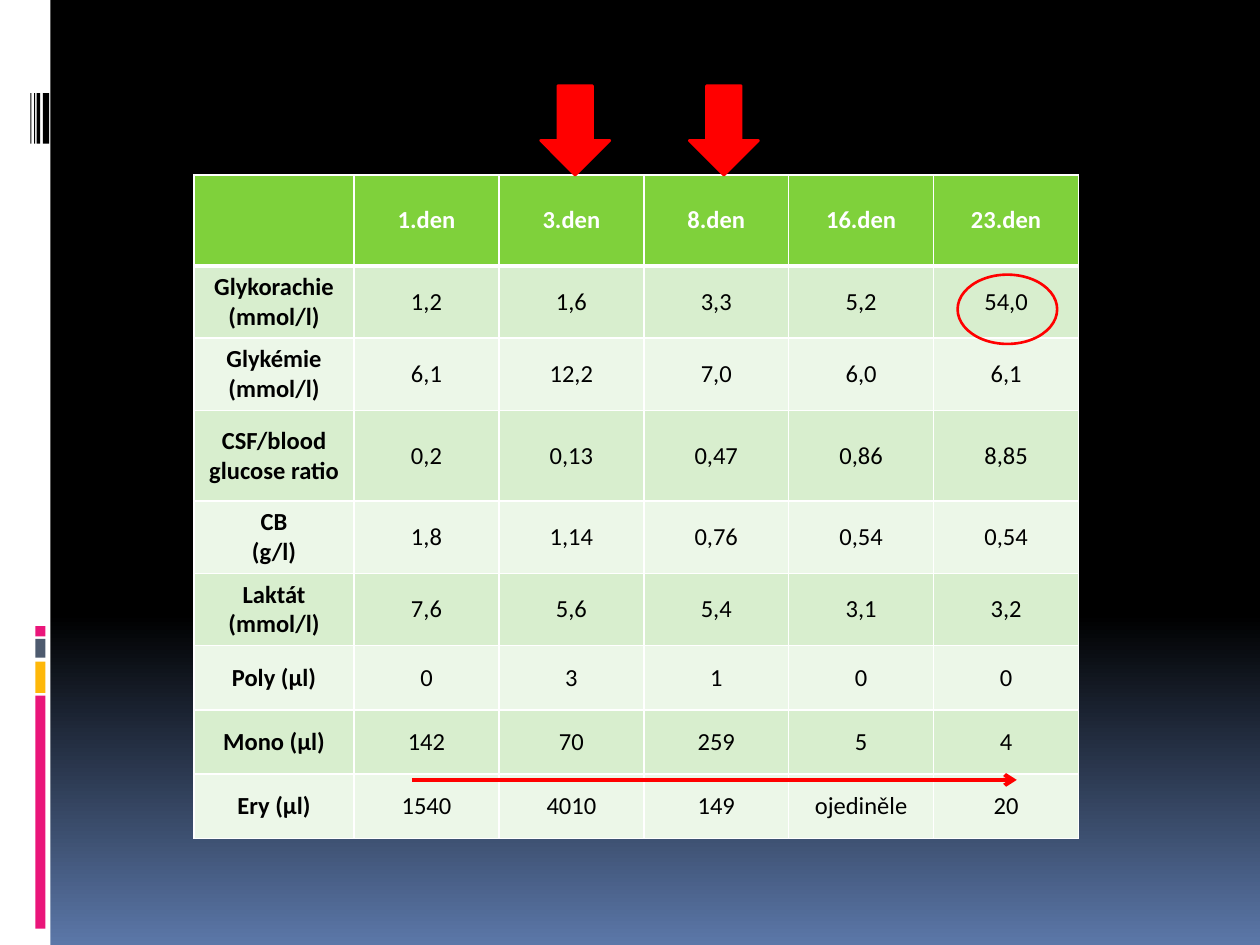
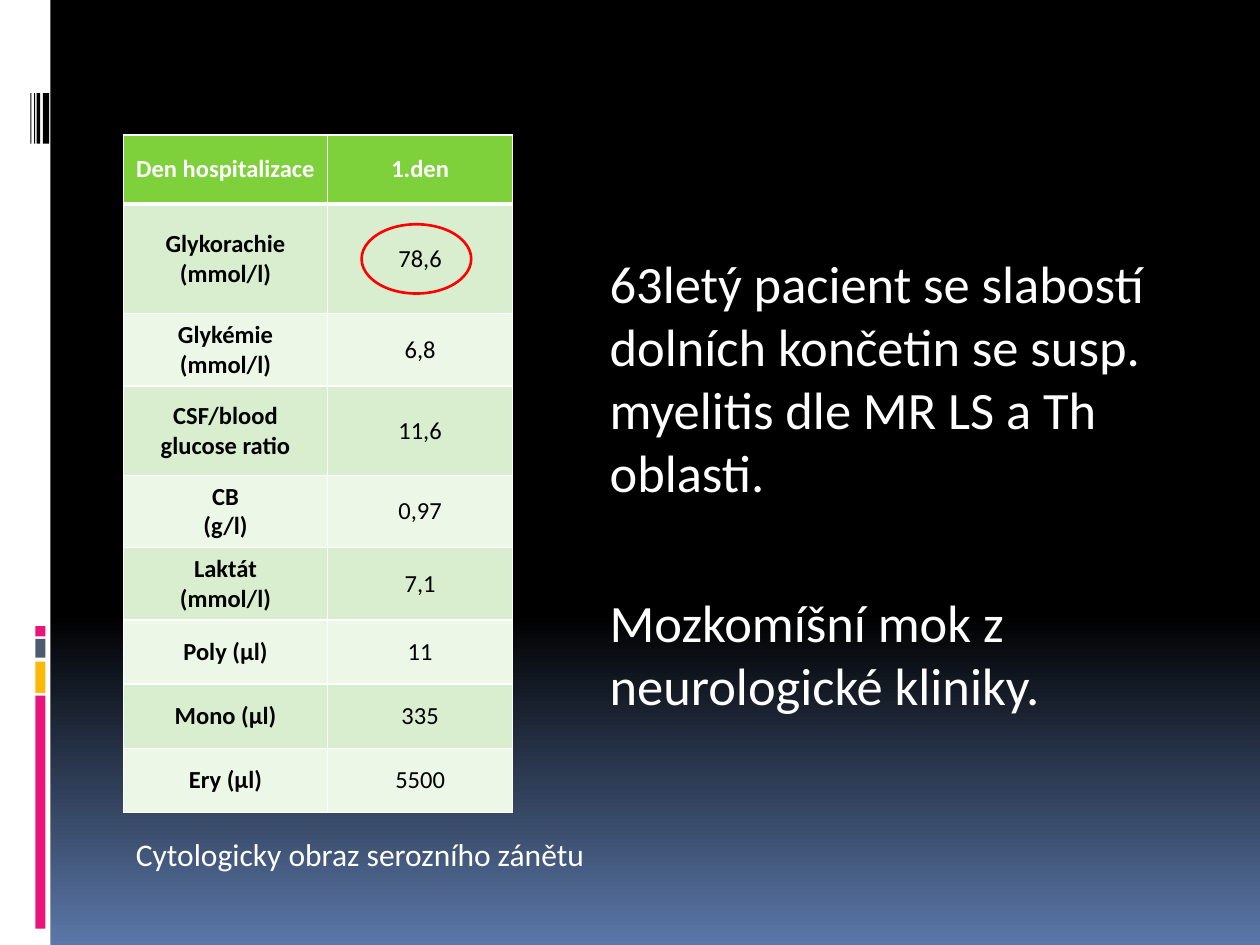
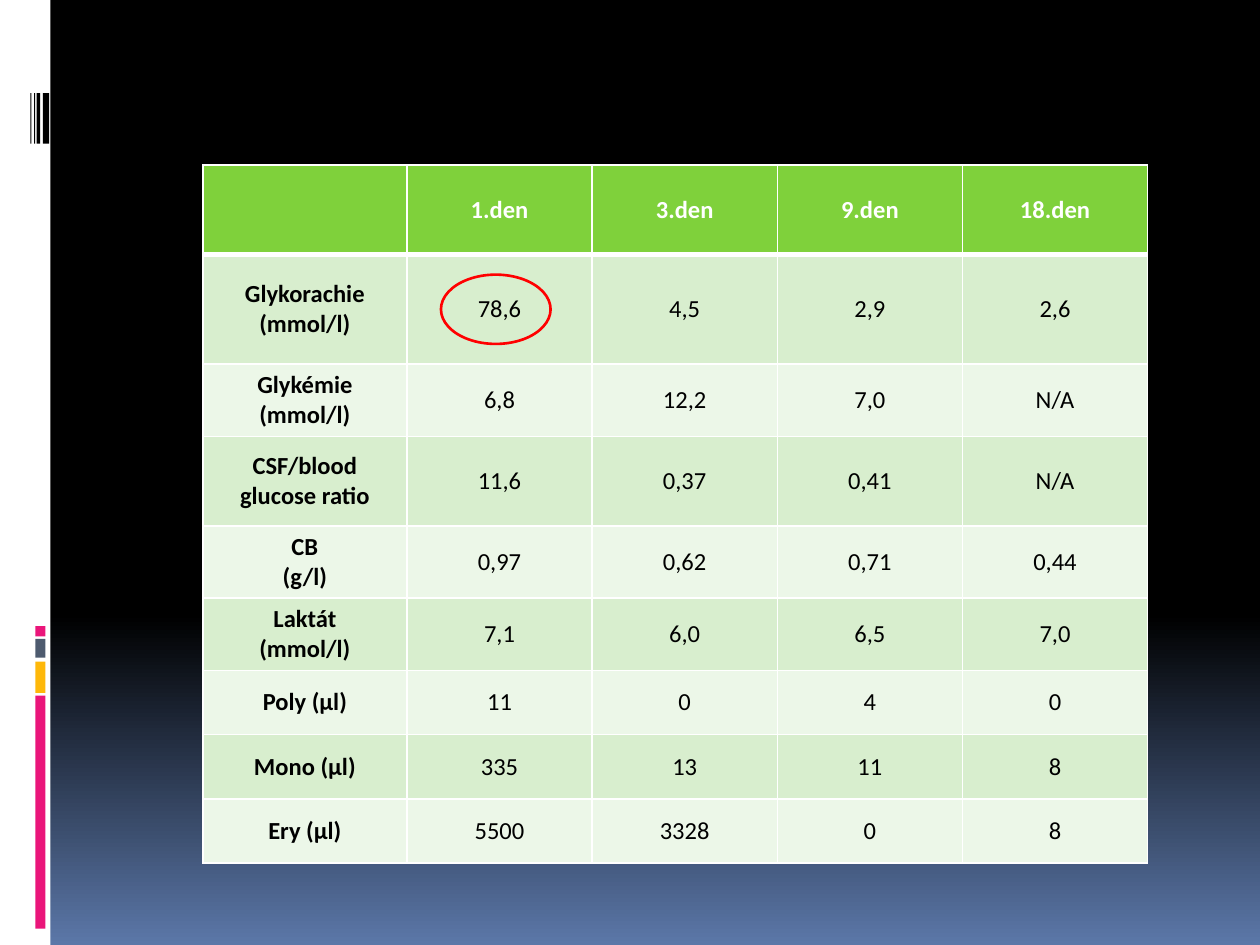
from pptx import Presentation
from pptx.dml.color import RGBColor as RGB
from pptx.enum.shapes import MSO_CONNECTOR as Line, MSO_SHAPE as Form
from pptx.enum.text import MSO_ANCHOR as Anchor, MSO_AUTO_SIZE as Fit, PP_ALIGN as Align
from pptx.oxml import parse_xml
from pptx.oxml.ns import nsdecls
from pptx.util import Inches, Pt

BLACK = RGB(0x00, 0x00, 0x00)
WHITE = RGB(0xFF, 0xFF, 0xFF)
BLUE = RGB(0x5B, 0x77, 0xA8)
PINK = RGB(0xEA, 0x15, 0x7A)
AMBER = RGB(0xFE, 0xB8, 0x0A)
SLATE = RGB(0x4E, 0x5B, 0x6F)
GREEN = RGB(0x7F, 0xD1, 0x3B)
PALE = RGB(0xEC, 0xF7, 0xE8)
MINT = RGB(0xD8, 0xEE, 0xCE)
RED = RGB(0xFF, 0x00, 0x00)
FONT = "Calibri"

BLOCKS = [(4.97, 0.08, PINK), (5.07, 0.15, SLATE), (5.25, 0.25, AMBER), (5.52, 1.85, PINK)]
BARS = [(0.24, 0.01), (0.27, 0.01), (0.29, 0.03), (0.34, 0.05)]
LABELS = [
    "Glykorachie\n(mmol/l)", "Glykémie\n(mmol/l)", "CSF/blood glucose ratio",
    "CB\n(g/l)", "Laktát\n(mmol/l)", "Poly (µl)", "Mono (µl)", "Ery (µl)",
]
COURSE = [
    ["", "1.den", "3.den", "8.den", "16.den", "23.den"],
    ["1,2", "1,6", "3,3", "5,2", "54,0"],
    ["6,1", "12,2", "7,0", "6,0", "6,1"],
    ["0,2", "0,13", "0,47", "0,86", "8,85"],
    ["1,8", "1,14", "0,76", "0,54", "0,54"],
    ["7,6", "5,6", "5,4", "3,1", "3,2"],
    ["0", "3", "1", "0", "0"],
    ["142", "70", "259", "5", "4"],
    ["1540", "4010", "149", "ojediněle", "20"],
]
FOLLOW = [
    ["", "1.den", "3.den", "9.den", "18.den"],
    ["78,6", "4,5", "2,9", "2,6"],
    ["6,8", "12,2", "7,0", "N/A"],
    ["11,6", "0,37", "0,41", "N/A"],
    ["0,97", "0,62", "0,71", "0,44"],
    ["7,1", "6,0", "6,5", "7,0"],
    ["11", "0", "4", "0"],
    ["335", "13", "11", "8"],
    ["5500", "3328", "0", "8"],
]
ENTRY = [["Den hospitalizace", "1.den"]] + [row[:1] for row in FOLLOW[1:]]


class Deck:
    """Holds the deck style and the slide being drawn."""

    def __init__(self):
        self.prs = Presentation()
        self.prs.slide_width, self.prs.slide_height = Inches(10), Inches(7.5)

    def start(self):
        self.slide = self.prs.slides.add_slide(self.prs.slide_layouts[6])
        self.shapes = self.slide.shapes
        fill = self.slide.background.fill
        fill.gradient()
        fill.gradient_angle = 270
        for stop, place, color in zip(fill.gradient_stops, (0.65, 1), (BLACK, BLUE)):
            stop.position = place
            stop.color.rgb = color
        self.shape(Form.RECTANGLE, 0, 0, 0.4, 7.5, WHITE)
        for top, high, color in BLOCKS:
            self.shape(Form.RECTANGLE, 0.28, top, 0.08, high, color)
        for left, wide in BARS:
            self.shape(Form.RECTANGLE, left, 0.74, wide, 0.4, BLACK)

    def shape(self, form, left, top, wide, high, fill=None, line=None):
        item = self.shapes.add_shape(form, Inches(left), Inches(top), Inches(wide), Inches(high))
        item.shadow.inherit = False
        if fill is None:
            item.fill.background()
        else:
            item.fill.solid()
            item.fill.fore_color.rgb = fill
        if line is None:
            item.line.fill.background()
        else:
            item.line.color.rgb = line
            item.line.width = Pt(1.5)

    def ring(self, left, top, wide):
        self.shape(Form.OVAL, left, top, wide, 0.55, line=RED)

    def arrow(self, left, right, y):
        line = self.shapes.add_connector(
            Line.STRAIGHT, Inches(left), Inches(y), Inches(right), Inches(y))
        line.line.color.rgb = RED
        line.line.width = Pt(2.25)
        line.line._get_or_add_ln().append(parse_xml(f'<a:tailEnd {nsdecls("a")} type="arrow"/>'))
        line._element.spPr.append(parse_xml(f'<a:effectLst {nsdecls("a")}/>'))

    def style(self, para, size, color=WHITE, bold=False):
        font = para.font
        font.name, font.size, font.bold = FONT, Pt(size), bold
        font.color.rgb = color

    def text(self, left, top, wide, high, paras, size, wrap=True, indent=0, gaps=(0,)):
        box = self.shapes.add_textbox(Inches(left), Inches(top), Inches(wide), Inches(high))
        frame = box.text_frame
        frame.word_wrap = wrap
        frame.auto_size = Fit.NONE if wrap else Fit.SHAPE_TO_FIT_TEXT
        frame.text = "\n".join(paras)
        for para, gap in zip(frame.paragraphs, gaps):
            self.style(para, size)
            para.space_before = Pt(gap)
            para._p.get_or_add_pPr().set("marL", str(Inches(indent)))

    def cell(self, cell, text, row, col):
        cell.text = text
        cell.vertical_anchor = Anchor.MIDDLE
        for para in cell.text_frame.paragraphs:
            para.alignment = Align.CENTER
            self.style(para, 14, BLACK if row else WHITE, row == 0 or col == 0)
        props = cell._tc.get_or_add_tcPr()
        thick = {"T": 3 if row == 1 else 1, "B": 1 if row else 3}
        for side in "LRTB":
            props.append(parse_xml(
                f'<a:ln{side} {nsdecls("a")} w="{Pt(thick.get(side, 1))}"><a:solidFill>'
                f'<a:srgbClr val="{WHITE}"/></a:solidFill></a:ln{side}>'))
        cell.fill.solid()
        cell.fill.fore_color.rgb = (MINT if row % 2 else PALE) if row else GREEN

    def table(self, left, top, first, wide, highs, data):
        rows = data[:1] + [[label] + vals for label, vals in zip(LABELS, data[1:])]
        cols = [first] + [wide] * (len(rows[0]) - 1)
        highs = highs + [0.51] * (len(rows) - len(highs))
        grid = self.shapes.add_table(
            len(rows), len(cols), Inches(left), Inches(top),
            Inches(sum(cols)), Inches(sum(highs))).table
        grid.horz_banding = False
        for col, size in zip(grid.columns, cols):
            col.width = Inches(size)
        for i, (row, high) in enumerate(zip(rows, highs)):
            grid.rows[i].height = Inches(high)
            for j, text in enumerate(row):
                self.cell(grid.cell(i, j), text, i, j)


def main():
    deck = Deck()

    deck.start()
    deck.table(1.54, 1.39, 1.27, 1.15, [0.72, 0.57, 0.51, 0.72], COURSE)
    for left in (4.29, 5.47):
        deck.shape(Form.DOWN_ARROW, left, 0.68, 0.55, 0.71, RED, RED)
    deck.ring(7.6, 2.18, 0.79)
    deck.arrow(3.27, 8.07, 6.19)

    deck.start()
    deck.text(4.29, 1.94, 5.21, 4.16, [
        "63letý pacient se slabostí dolních končetin se susp. myelitis dle MR LS a Th oblasti.",
        "Mozkomíšní mok z neurologické kliniky.",
    ], 30, indent=0.45, gaps=(7, 50))
    deck.table(0.98, 1.07, 1.62, 1.47, [0.55, 0.87, 0.51, 0.71], ENTRY)
    deck.text(0.98, 6.58, 3.9, 0.4, ["Cytologicky obraz serozního zánětu"], 18, wrap=False)
    deck.ring(2.87, 1.78, 0.87)

    deck.start()
    deck.table(1.61, 1.31, 1.62, 1.47, [0.71, 0.87, 0.51, 0.71], FOLLOW)
    deck.ring(3.5, 2.18, 0.87)

    deck.prs.save("out.pptx")


if __name__ == "__main__":
    main()
